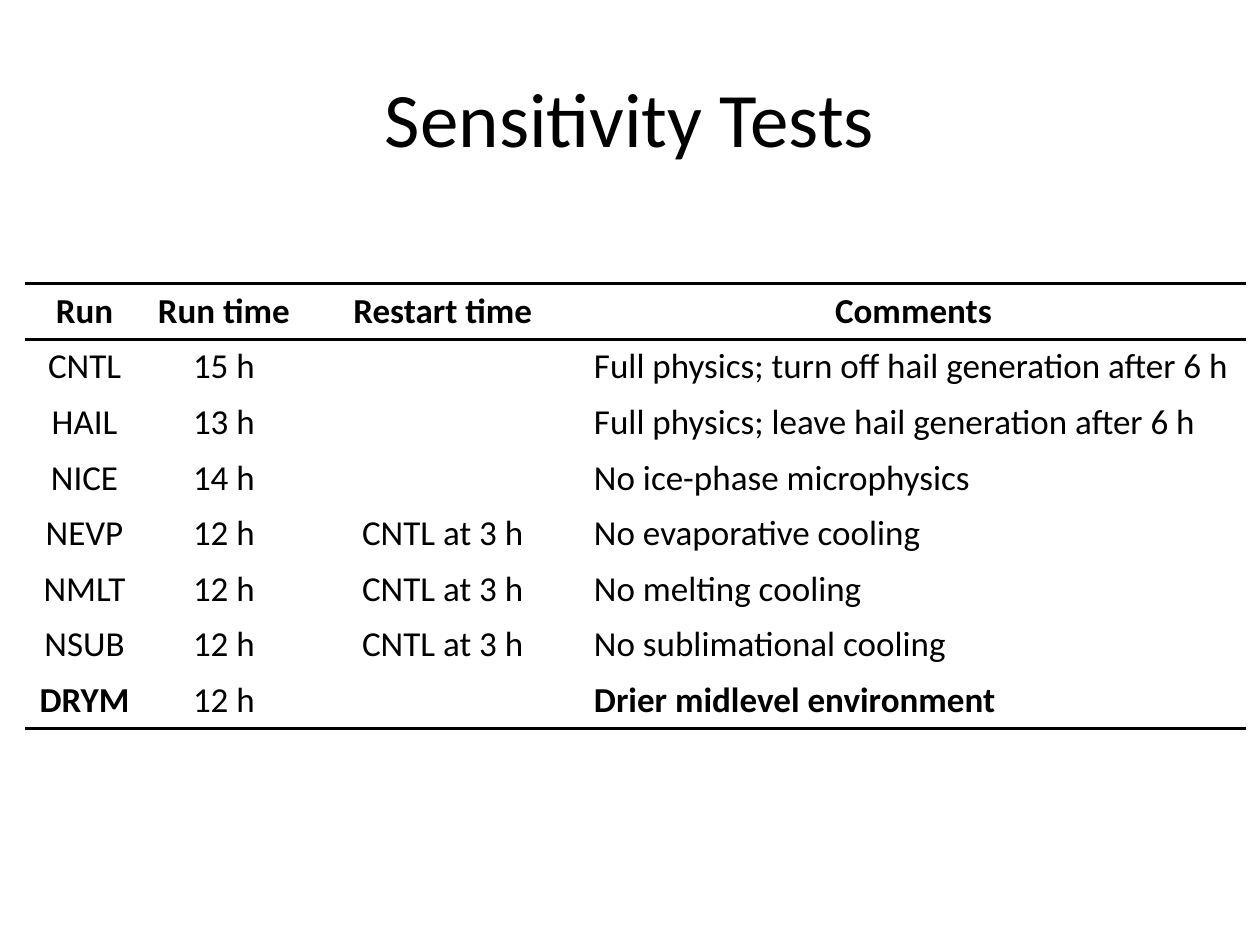
from dataclasses import dataclass

from lxml.etree import SubElement
from pptx import Presentation
from pptx.dml.color import RGBColor
from pptx.enum.text import MSO_ANCHOR, PP_ALIGN
from pptx.oxml.ns import qn
from pptx.table import Table, _Cell
from pptx.text.text import TextFrame
from pptx.util import Cm, Pt

COLORS = {"ink": "000000", "paper": "FFFFFF"}
FONT = "Calibri"
NO_STYLE = "{2D5ABB26-0587-4C30-8999-92F81FD0307C}"
HEADINGS = ("Run", "Run time", "Restart time", "Comments")
COLUMN_WIDTHS = (2.39, 3.23, 5.59, 13.39)
ROW_HEIGHT = 1.12


@dataclass
class Run:
    name: str
    run_time: str
    restart_time: str
    comments: str
    bold: bool = False


RUNS = (
    Run("CNTL", "15 h", "", "Full physics; turn off hail generation after 6 h"),
    Run("HAIL", "13 h", "", "Full physics; leave hail generation after 6 h"),
    Run("NICE", "14 h", "", "No ice-phase microphysics"),
    Run("NEVP", "12 h", "CNTL at 3 h", "No evaporative cooling"),
    Run("NMLT", "12 h", "CNTL at 3 h", "No melting cooling"),
    Run("NSUB", "12 h", "CNTL at 3 h", "No sublimational cooling"),
    Run("DRYM", "12 h", "", "Drier midlevel environment", bold=True),
)


def write_text(frame: TextFrame, text: str, *, size: float = 20, bold: bool = False,
               align: PP_ALIGN = PP_ALIGN.CENTER) -> None:
    """Write one formatted paragraph into a text frame."""
    paragraph = frame.paragraphs[0]
    paragraph.alignment = align
    if not text:
        return
    run = paragraph.add_run()
    run.text = text
    run.font.name = FONT
    run.font.size = Pt(size)
    run.font.bold = bold
    run.font.color.rgb = RGBColor.from_string(COLORS["ink"])


def format_cell(cell: _Cell, sides: tuple[str, ...]) -> None:
    """Rule the given sides of a cell and fill it."""
    properties = cell._tc.get_or_add_tcPr()
    for side in sides:
        line = SubElement(properties, qn(f"a:ln{side}"), w=str(Pt(2)))
        fill = SubElement(line, qn("a:solidFill"))
        SubElement(fill, qn("a:srgbClr"), val=COLORS["ink"])
    cell.fill.solid()
    cell.fill.fore_color.rgb = RGBColor.from_string(COLORS["paper"])


def fill_header(table: Table) -> None:
    """Write the column headings between two rules."""
    for column, heading in enumerate(HEADINGS):
        cell = table.cell(0, column)
        format_cell(cell, ("T", "B"))
        write_text(cell.text_frame, heading, bold=True)


def fill_run(table: Table, row: int, run: Run) -> None:
    """Write one model run, ruled below if it is the last."""
    values = (run.name, run.run_time, run.restart_time, run.comments)
    for column, value in enumerate(values):
        cell = table.cell(row, column)
        format_cell(cell, ("B",) if row == len(RUNS) else ())
        write_text(cell.text_frame, value, bold=run.bold and column in (0, 3),
                   align=PP_ALIGN.LEFT if column == 3 else PP_ALIGN.CENTER)


def main() -> None:
    """Build the sensitivity tests slide."""
    presentation = Presentation()
    presentation.slide_width, presentation.slide_height = Cm(25.4), Cm(19.05)
    slide = presentation.slides.add_slide(presentation.slide_layouts[6])

    title = slide.shapes.add_textbox(Cm(1.27), Cm(0.76), Cm(22.86), Cm(3.18)).text_frame
    title.word_wrap = True
    title.vertical_anchor = MSO_ANCHOR.MIDDLE
    write_text(title, "Sensitivity Tests", size=44)

    row_count = len(RUNS) + 1
    table = slide.shapes.add_table(
        row_count, len(HEADINGS), Cm(0.51), Cm(5.72),
        Cm(sum(COLUMN_WIDTHS)), Cm(ROW_HEIGHT * row_count)).table
    table.first_row = table.horz_banding = False
    table._tbl.tblPr.find(qn("a:tableStyleId")).text = NO_STYLE
    for column, width in zip(table.columns, COLUMN_WIDTHS):
        column.width = Cm(width)

    fill_header(table)
    for row, run in enumerate(RUNS, start=1):
        fill_run(table, row, run)
    presentation.save("out.pptx")


if __name__ == "__main__":
    main()
